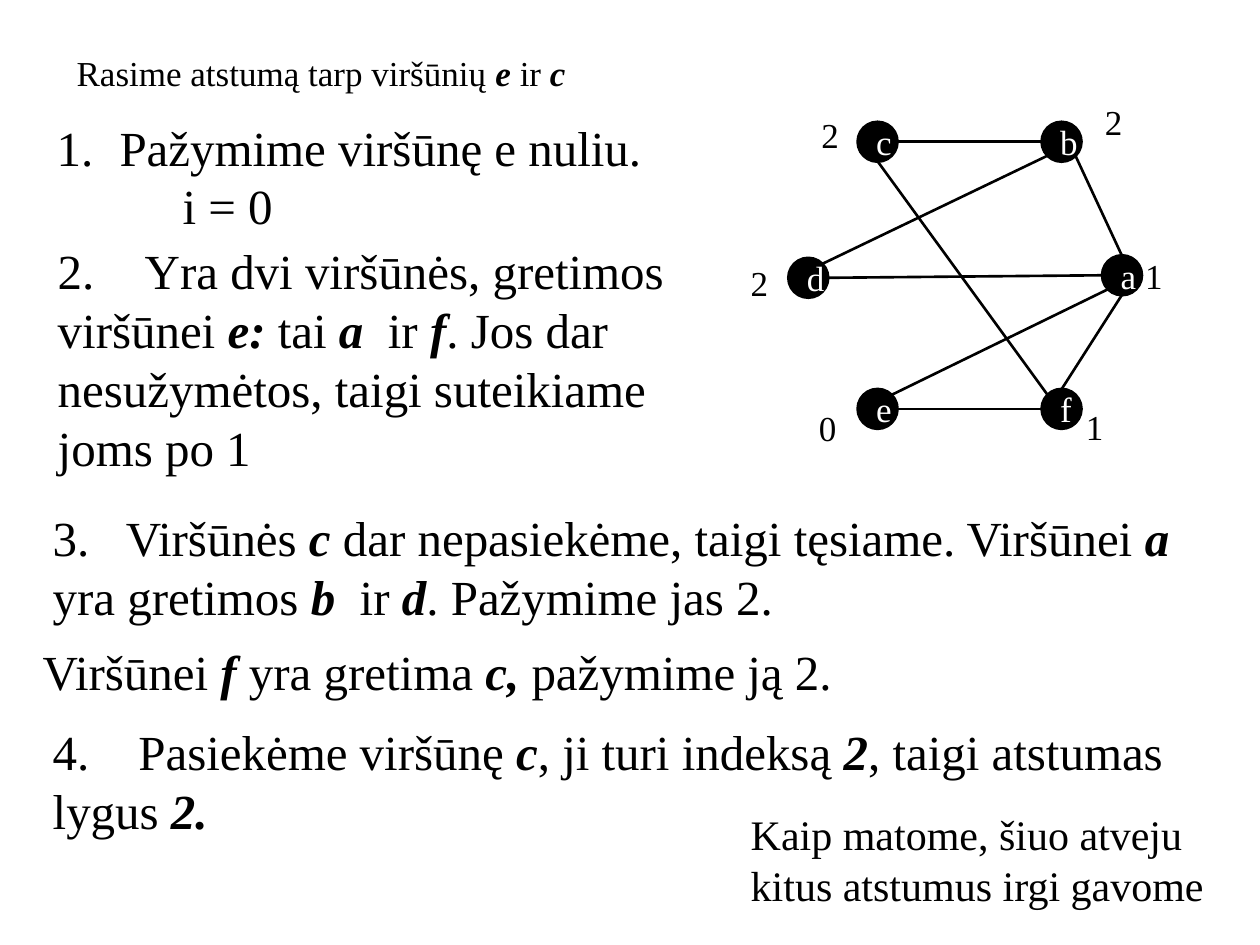
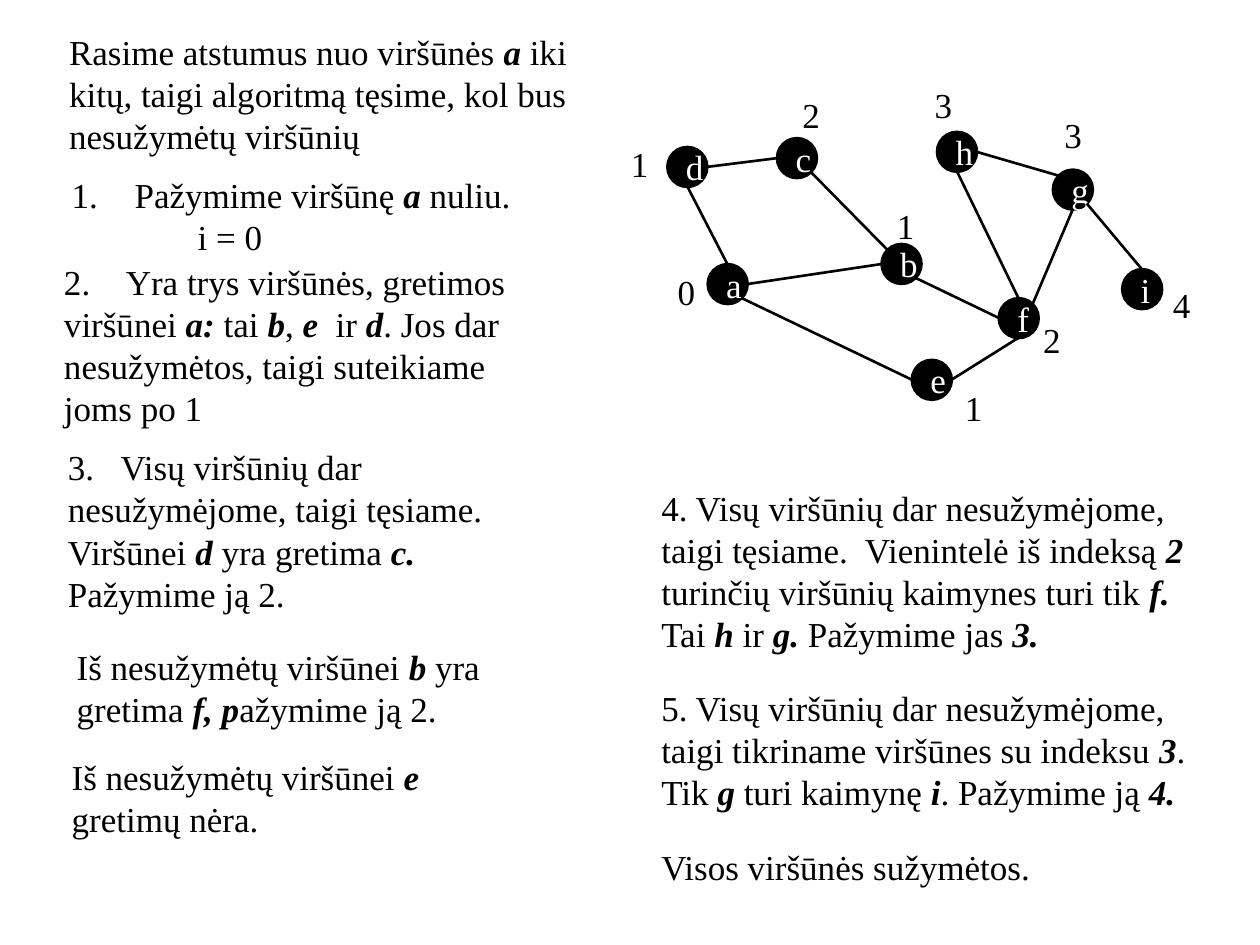
from lxml.etree import SubElement
from pptx import Presentation
from pptx.dml.color import RGBColor
from pptx.enum.shapes import MSO_CONNECTOR as Connector, MSO_SHAPE as Shape
from pptx.enum.text import MSO_ANCHOR as Anchor, MSO_AUTO_SIZE as AutoSize, PP_ALIGN as Align
from pptx.oxml.ns import qn
from pptx.util import Inches, Pt

FONT = "Times New Roman"
BLACK = "000000"
WHITE = "FFFFFF"
SMALL, MEDIUM, LARGE = 20, 24, 28
DIAMETER = 0.31

# Points on a vertex's rim, as shares of its radius from the centre
RIM = {"N": (0, -1), "S": (0, 1), "W": (-1, 0), "E": (1, 0),
       "NW": (-0.71, -0.71), "NE": (0.71, -0.71),
       "SW": (-0.71, 0.71), "SE": (0.71, 0.71)}


def colour(hex_string):
    return RGBColor.from_string(hex_string)


def write(paragraph, text, size=SMALL, ink=BLACK, align=Align.LEFT):
    """Fill a paragraph; parts between asterisks become bold italic."""
    paragraph.alignment = align
    for index, part in enumerate(text.split("*")):
        if part:
            run = paragraph.add_run()
            run.text = part
            font = run.font
            font.name, font.size = FONT, Pt(size)
            font.bold = font.italic = index % 2 == 1
            font.color.rgb = colour(ink)


def set_indent(paragraph, margin, first_line=0):
    properties = paragraph._p.get_or_add_pPr()
    properties.set("marL", str(Inches(margin)))
    properties.set("indent", str(Inches(first_line)))
    return properties


class GraphSlide:
    """Holds the presentation's style and the slide being filled."""

    def __init__(self, presentation):
        self.slide = presentation.slides.add_slide(presentation.slide_layouts[6])
        self.slide.background.fill.solid()
        self.slide.background.fill.fore_color.rgb = colour(WHITE)

    def text_frame(self, left, top, width, height, wrap=True):
        box = self.slide.shapes.add_textbox(*map(Inches, (left, top, width, height)))
        frame = box.text_frame
        frame.word_wrap = wrap
        frame.auto_size = AutoSize.SHAPE_TO_FIT_TEXT
        return frame

    def text(self, place, text, size=SMALL, tab=None):
        """Add a text box; tab is where the words after a step number begin."""
        paragraph = self.text_frame(*place).paragraphs[0]
        write(paragraph, text, size)
        if tab:
            stops = SubElement(paragraph._p.get_or_add_pPr(), qn("a:tabLst"))
            SubElement(stops, qn("a:tab"), pos=str(Inches(tab)), algn="l")

    def first_step(self, place, text, counter, size=SMALL):
        """Add the automatically numbered step and its indented counter."""
        frame = self.text_frame(*place)
        step = frame.paragraphs[0]
        properties = set_indent(step, 0.5, -0.5)
        SubElement(properties, qn("a:buFontTx"))
        SubElement(properties, qn("a:buAutoNum"), type="arabicPeriod")
        write(step, text, size)
        counter_line = frame.add_paragraph()
        set_indent(counter_line, 1)
        write(counter_line, counter, size)

    def vertex(self, name, left, top):
        circle = self.slide.shapes.add_shape(
            Shape.OVAL, *map(Inches, (left, top, DIAMETER, DIAMETER)))
        circle.shadow.inherit = False
        circle.fill.solid()
        circle.fill.fore_color.rgb = colour(BLACK)
        circle.line.color.rgb = colour(BLACK)
        circle.line.width = Pt(2)
        circle.text_frame.vertical_anchor = Anchor.MIDDLE
        write(circle.text_frame.paragraphs[0], name, ink=WHITE, align=Align.CENTER)

    def distance(self, value, left, top):
        frame = self.text_frame(left, top, 0.34, 0.44, wrap=False)
        write(frame.paragraphs[0], str(value))

    def edge(self, start, end):
        line = self.slide.shapes.add_connector(
            Connector.STRAIGHT, *map(Inches, start + end))
        line.line.color.rgb = colour(BLACK)
        line.line.width = Pt(1.5)
        SubElement(line._element.spPr, qn("a:effectLst"))

    def graph(self, vertices, edges):
        """Draw vertices {name: (place, distance, distance place)} and edges
        given as "vertex rim-point vertex rim-point"."""
        def rim_point(name, side):
            return tuple(corner + DIAMETER / 2 * (1 + share)
                         for corner, share in zip(vertices[name][0], RIM[side]))

        for name, (place, value, value_place) in vertices.items():
            self.distance(value, *value_place)
            self.vertex(name, *place)
        for edge in edges:
            first, first_side, second, second_side = edge.split()
            self.edge(rim_point(first, first_side), rim_point(second, second_side))


def build_pair_distance(presentation):
    page = GraphSlide(presentation)
    page.text((0.51, 0.36, 4.33, 0.44), "Rasime atstumą tarp viršūnių *e *ir *c*")
    page.first_step((0.35, 0.88, 5.61, 1.04), "Pažymime viršūnę e nuliu.", "i = 0", LARGE)
    page.text((0.36, 1.86, 5.19, 2.46),
              "2.\tYra dvi viršūnės, gretimos viršūnei *e: *tai *a * ir *f*. "
              "Jos dar nesužymėtos, taigi suteikiame joms po 1", LARGE, tab=0.69)
    page.text((0.32, 3.98, 9.64, 1.51),
              "3.\tViršūnės *c *dar nepasiekėme, taigi tęsiame. Viršūnei *a *"
              "yra gretimos *b * ir *d*. Pažymime jas 2.", LARGE, tab=0.58)
    page.text((0.24, 5.04, 9.25, 1.04),
              "Viršūnei *f *yra gretima *c, *pažymime ją 2.", LARGE)
    page.text((0.32, 5.68, 9.14, 1.51),
              "4.\tPasiekėme viršūnę *c*, ji turi indeksą *2*, "
              "taigi atstumas lygus *2.*", LARGE, tab=0.68)
    page.text((5.86, 6.37, 3.81, 0.91),
              "Kaip matome, šiuo atveju kitus atstumus irgi gavome", MEDIUM)
    page.graph(
        {"a": ((8.75, 2.03), 1, (8.99, 1.97)),
         "b": ((8.27, 0.97), 2, (8.67, 0.75)),
         "c": ((6.81, 0.97), 2, (6.42, 0.85)),
         "d": ((6.26, 2.05), 2, (5.86, 2.03)),
         "e": ((6.81, 3.09), 0, (6.4, 3.18)),
         "f": ((8.27, 3.09), 1, (8.52, 3.17))},
        ["c E b W", "d E a W", "e NE a SW", "d NE b SW",
         "b SE a N", "f N a S", "c S f NW", "e E f W"])


def build_all_distances(presentation):
    page = GraphSlide(presentation)
    page.text((0.45, 0.19, 4.33, 1.11),
              "Rasime atstumus nuo viršūnės *a *iki kitų, taigi algoritmą tęsime, "
              "kol bus nesužymėtų viršūnių")
    page.first_step((0.47, 1.33, 3.86, 0.77), "Pažymime viršūnę *a* nuliu.", "i = 0")
    page.text((0.41, 2.02, 4.06, 1.78),
              "2.\tYra trys viršūnės, gretimos viršūnei *a: *tai *b*, *e * ir *d*. "
              "Jos dar nesužymėtos, taigi suteikiame joms po 1", tab=0.49)
    page.text((0.44, 3.49, 3.97, 1.78),
              "3.\tVisų viršūnių dar nesužymėjome, taigi tęsiame. "
              "Viršūnei *d *yra gretima *c. *Pažymime ją 2.", tab=0.42)
    page.text((0.51, 5.07, 3.59, 1.11),
              "Iš nesužymėtų viršūnei *b *yra gretima *f, p*ažymime ją 2.")
    page.text((0.47, 5.95, 3.59, 1.11), "Iš nesužymėtų viršūnei *e *gretimų nėra.")
    page.text((5.15, 3.81, 4.58, 1.45),
              "4. Visų viršūnių dar nesužymėjome, taigi tęsiame.  Vienintelė iš indeksą "
              "*2 *turinčių viršūnių kaimynes turi tik *f. *Tai *h *ir *g. *"
              "Pažymime jas *3.*")
    page.text((5.15, 5.4, 4.74, 1.11),
              "5. Visų viršūnių dar nesužymėjome, taigi tikriname viršūnes su indeksu "
              "*3*. Tik *g *turi kaimynę *i*. Pažymime ją *4.*")
    page.text((5.15, 6.66, 4.74, 0.44), "Visos viršūnės sužymėtos.")
    page.graph(
        {"a": ((5.62, 2.1), 0, (5.28, 2.1)),
         "b": ((7, 1.94), 1, (7.02, 1.57)),
         "c": ((6.17, 1.1), 2, (6.27, 0.69)),
         "d": ((5.3, 1.17), 1, (4.91, 1.08)),
         "e": ((7.24, 2.86), 1, (7.56, 3.02)),
         "f": ((7.93, 2.37), 2, (8.18, 2.48)),
         "g": ((8.36, 1.35), 3, (8.35, 0.85)),
         "h": ((7.44, 1.05), 3, (7.32, 0.61)),
         "i": ((8.91, 2.14), 4, (9.21, 2.2))},
        ["c SE b NW", "d E c W", "e W a SE", "f W b SE", "b W a E", "f S e E",
         "d S a N", "h S f N", "g S f NE", "g NW h E", "g SE i N"])


def main():
    presentation = Presentation()
    presentation.slide_width, presentation.slide_height = Inches(10), Inches(7.5)
    build_pair_distance(presentation)
    build_all_distances(presentation)
    presentation.save("out.pptx")


if __name__ == "__main__":
    main()
